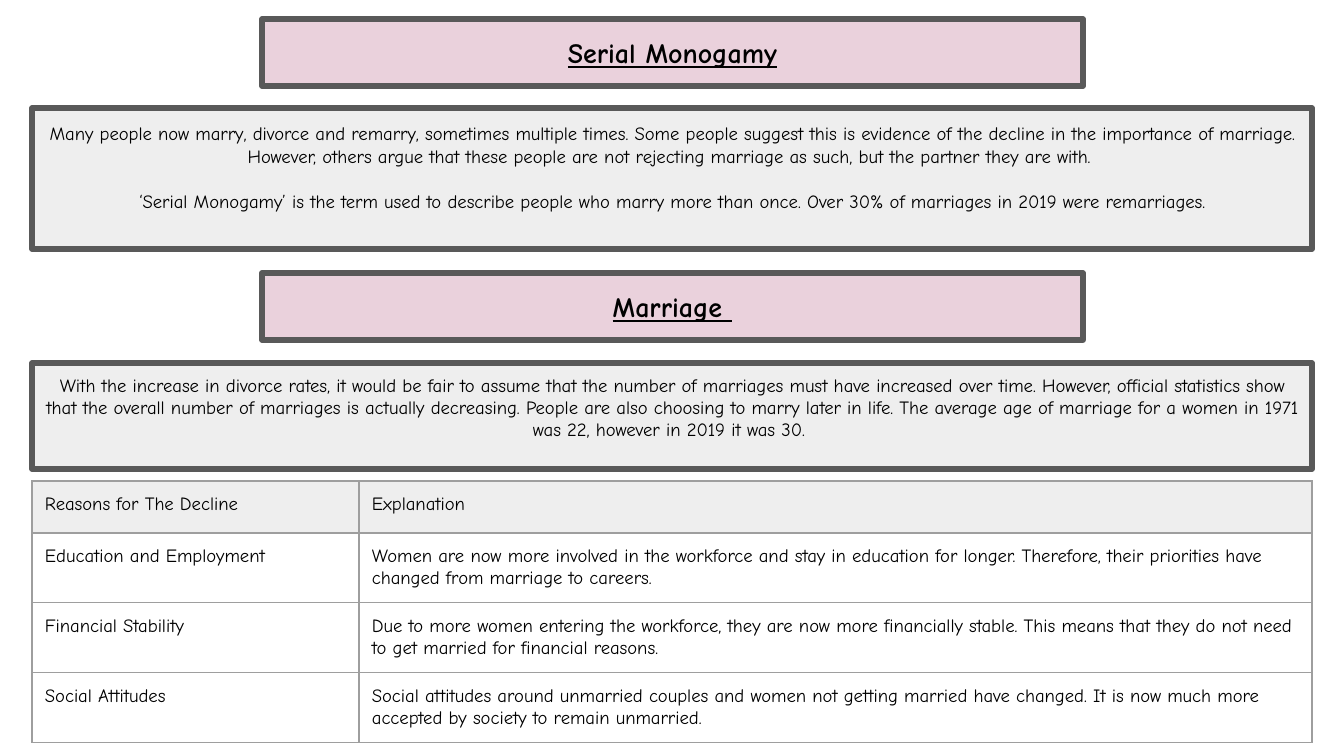
from lxml.etree import SubElement
from pptx import Presentation
from pptx.dml.color import RGBColor
from pptx.enum.shapes import MSO_SHAPE
from pptx.enum.text import MSO_ANCHOR, MSO_AUTO_SIZE, PP_ALIGN
from pptx.oxml.ns import qn
from pptx.util import Emu, Pt

PX = 914400 / 134.4
INSET = 13
FONT = "Comic Neue"
BLACK = RGBColor(0x00, 0x00, 0x00)
PINK = RGBColor(0xEA, 0xD1, 0xDC)
PALE_GREY = RGBColor(0xEE, 0xEE, 0xEE)
DARK_GREY = RGBColor(0x59, 0x59, 0x59)
GRID_GREY = RGBColor(0x9E, 0x9E, 0x9E)


def px(length):
    return Emu(round(length * PX))


def add_text(paragraph, text, size=10, heading=False):
    run = paragraph.add_run()
    run.text = text
    run.font.name = FONT
    run.font.size = Pt(size)
    run.font.color.rgb = BLACK
    run.font.bold = heading
    run.font.underline = heading


prs = Presentation()
prs.slide_width, prs.slide_height = px(1344), px(756)
slide = prs.slides.add_slide(prs.slide_layouts[5])

headings = [("Serial Monogamy", 19), ("Marriage ", 273)]
passages = [
    (108, 141, 36, [
        "Many people now marry, divorce and remarry, sometimes multiple times. Some people suggest this is evidence of the decline in the importance of marriage. However, others argue that these people are not rejecting marriage as such, but the partner they are with. ",
        "‘Serial Monogamy’ is the term used to describe people who marry more than once. Over 30% of marriages in 2019 were remarriages.",
    ]),
    (363, 106, 31, [
        "With the increase in divorce rates, it would be fair to assume that the number of marriages must have increased over time. However, official statistics show that the overall number of marriages is actually decreasing. People are also choosing to marry later in life. The average age of marriage for a women in 1971 was 22, however in 2019 it was 30. ",
    ]),
]
panels = []
for (heading, heading_top), (top, height, bottom_inset, paragraphs) in zip(headings, passages):
    panels.append((262, heading_top, 821, 67, PINK, INSET, [heading], 15))
    panels.append((32, top, 1280, height, PALE_GREY, bottom_inset, paragraphs, 10))

for index, (left, top, width, height, fill, bottom_inset, paragraphs, size) in enumerate(panels):
    box = px(left), px(top), px(width), px(height)
    if index == 0:
        panel = slide.shapes.title
        panel.left, panel.top, panel.width, panel.height = box
    else:
        panel = slide.shapes.add_shape(MSO_SHAPE.RECTANGLE, *box)
        panel.shadow.inherit = False
    panel.fill.solid()
    panel.fill.fore_color.rgb = fill
    panel.line.color.rgb = DARK_GREY
    panel.line.width = Pt(3)
    frame = panel.text_frame
    frame.word_wrap = True
    frame.auto_size = MSO_AUTO_SIZE.NONE
    frame.vertical_anchor = MSO_ANCHOR.MIDDLE
    frame.margin_left = frame.margin_right = frame.margin_top = px(INSET)
    frame.margin_bottom = px(bottom_inset)
    for number, text in enumerate(paragraphs):
        paragraph = frame.add_paragraph() if number else frame.paragraphs[0]
        paragraph.alignment = PP_ALIGN.CENTER
        paragraph.space_before = Pt(12 if number else 0)
        add_text(paragraph, text, size, heading=fill == PINK)

reasons = [
    ("Reasons for The Decline", "Explanation"),
    ("Education and Employment", "Women are now more involved in the workforce and stay in education for longer. Therefore, their priorities have changed from marriage to careers."),
    ("Financial Stability", "Due to more women entering the workforce, they are now more financially stable. This means that they do not need to get married for financial reasons."),
    ("Social Attitudes", "Social attitudes around unmarried couples and women not getting married have changed. It is now much more accepted by society to remain unmarried."),
]
decline = slide.shapes.add_table(len(reasons), 2, px(32), px(481), px(1280), px(262)).table
decline.first_row = False
decline.horz_banding = False
for column, width in zip(decline.columns, (327, 953)):
    column.width = px(width)
for row_number, reason in enumerate(reasons):
    decline.rows[row_number].height = px(70 if row_number else 52)
    for column_number, text in enumerate(reason):
        cell = decline.cell(row_number, column_number)
        cell.margin_left = cell.margin_right = px(INSET)
        cell.margin_top = cell.margin_bottom = px(INSET)
        add_text(cell.text_frame.paragraphs[0], text)
        properties = cell._tc.get_or_add_tcPr()
        for side in ("a:lnL", "a:lnR", "a:lnT", "a:lnB"):
            border = SubElement(properties, qn(side), w=str(Pt(0.75)))
            border_fill = SubElement(border, qn("a:solidFill"))
            SubElement(border_fill, qn("a:srgbClr"), val=str(GRID_GREY))
        if row_number == 0:
            cell.fill.solid()
            cell.fill.fore_color.rgb = PALE_GREY
        else:
            cell.fill.background()

prs.save("out.pptx")
